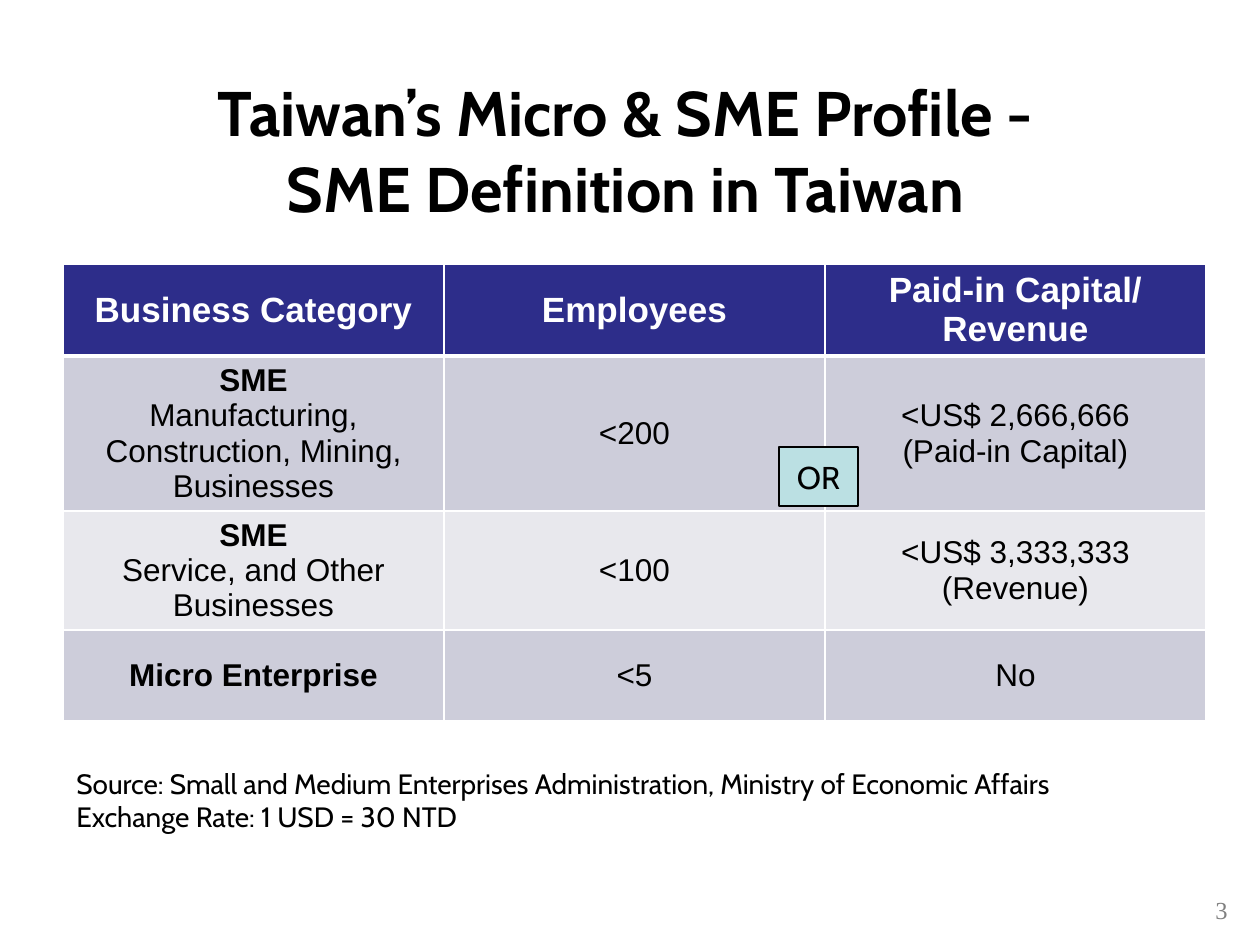
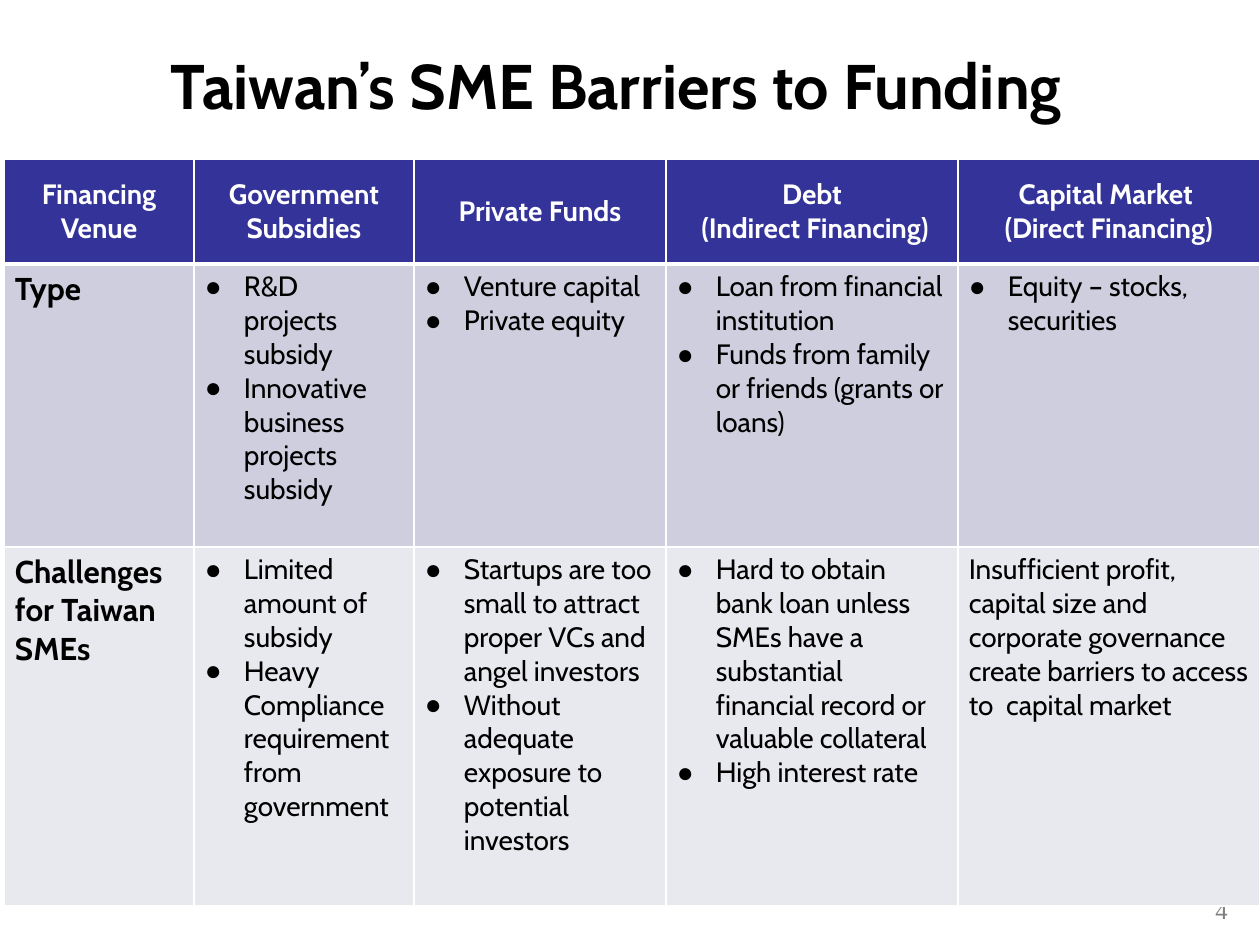
from lxml.etree import SubElement
from pptx import Presentation
from pptx.dml.color import RGBColor
from pptx.enum.shapes import MSO_SHAPE
from pptx.enum.text import MSO_ANCHOR, MSO_AUTO_SIZE, PP_ALIGN
from pptx.oxml.ns import qn
from pptx.util import Pt

PX = 914400 / 126
INK = {
    "text": "000000", "white": "FFFFFF", "page": "808080", "badge": "BBE0E3",
    "head1": "2D2D8A", "dark1": "CDCDDA", "light1": "E8E8ED",
    "head2": "333399", "dark2": "CECEDE", "light2": "E8E8EF",
}
MID, TOP = MSO_ANCHOR.MIDDLE, MSO_ANCHOR.TOP
MAIN = {"name": "Cabin", "size": 36, "bold": True, "ink": "text", "align": PP_ALIGN.CENTER}
PAGE = {"name": "Times New Roman", "size": 14, "bold": False, "ink": "page", "align": PP_ALIGN.RIGHT}
NOTE = {**PAGE, "name": "Cabin", "size": 16, "ink": "text", "align": PP_ALIGN.LEFT}
BADGE = {**NOTE, "size": 18, "align": PP_ALIGN.CENTER}
EDGES = [
    [(1263, 882), (1244, 914), (1226, 937), (1200, 945), (1263, 945)],
    [(1200, 0), (1231, 18), (1254, 37), (1263, 63), (1263, 0)],
    [(63, 945), (32, 927), (8, 908), (0, 882), (0, 945)],
]

SIZES = {
    "title": ["Taiwan’s Micro & SME Profile -", "SME Definition in Taiwan"],
    "place": (65, 74, 1121, 150),
    "page": "3",
    "at": (63, 264),
    "cols": [381, 381, 381],
    "rows": [92, 154, 119, 91],
    "fills": ["head1", "dark1", "light1", "dark1"],
    "head": {**MAIN, "name": "Arial", "size": 20, "ink": "white"},
    "body": {**BADGE, "name": "Arial"},
    "anchor": MID,
    "inset": (13, 2),
    "cells": [
        [["Business Category"], ["Employees"], ["Paid-in Capital/ Revenue"]],
        [["*SME", "Manufacturing, Construction, Mining, Businesses"], ["<200"],
         ["<US$ 2,666,666", "(Paid-in Capital)"]],
        [["*SME", "Service, and Other Businesses"], ["<100"],
         ["<US$ 3,333,333", "(Revenue)"]],
        [["*Micro Enterprise"], ["<5"], ["No"]],
    ],
}
FUNDS = {
    "title": ["Taiwan’s SME Barriers to Funding"],
    "place": (1, 17, 1230, 135),
    "page": "4",
    "at": (4, 159),
    "cols": [190, 220, 252, 292, 302],
    "rows": [105, 283, 359],
    "fills": ["head2", "dark2", "light2"],
    "head": {**MAIN, "size": 16, "ink": "white"},
    "body": NOTE,
    "anchor": TOP,
    "inset": (11, 6),
    "cells": [
        [["Financing Venue"], ["Government Subsidies"], ["Private Funds"],
         ["Debt", " (Indirect Financing)"], ["Capital Market ", "(Direct Financing)"]],
        [["*Type"],
         ["•R&D  projects subsidy", "•Innovative business projects subsidy"],
         ["•Venture capital", "•Private equity"],
         ["•Loan from financial institution",
          "•Funds from family or friends (grants or loans)"],
         ["•Equity – stocks, securities"]],
        [["*Challenges for Taiwan SMEs"],
         ["•Limited amount of subsidy",
          "•Heavy Compliance requirement from government"],
         ["•Startups are too small to attract proper VCs and angel investors",
          "•Without adequate exposure to potential investors"],
         ["•Hard to obtain bank loan unless SMEs have a substantial financial record or valuable collateral",
          "•High interest rate"],
         ["Insufficient profit, capital size and corporate governance create barriers to access to  capital market"]],
    ],
}
SOURCE = [
    "Source: Small and Medium Enterprises Administration, Ministry of Economic Affairs",
    "Exchange Rate: 1 USD = 30 NTD",
]


def px(*nums):
    return [round(num * PX) for num in nums]


def rgb(ink):
    return RGBColor.from_string(INK[ink])


def apply(item, **vals):
    for key, val in vals.items():
        setattr(item, key, val)


def paint(shape, fill, line, wide):
    shape.shadow.inherit = False
    if fill:
        shape.fill.solid()
        shape.fill.fore_color.rgb = rgb(fill)
    else:
        shape.fill.background()
    if line:
        shape.line.color.rgb = rgb(line)
        shape.line.width = Pt(wide)
    else:
        shape.line.fill.background()


def write(frame, lines, style):
    for num, line in enumerate(lines):
        para = frame.add_paragraph() if num else frame.paragraphs[0]
        para.alignment = style["align"]
        run = para.add_run()
        run.text = line.lstrip("*•")
        apply(run.font, name=style["name"], size=Pt(style["size"]), bold=style["bold"])
        run.font.color.rgb = rgb(style["ink"])
        if line[0] == "*":
            apply(run.font, size=Pt(18), bold=True)
        if line[0] == "•":
            prop = para._p.get_or_add_pPr()
            dent = px(39)[0]
            prop.set("marL", str(dent))
            prop.set("indent", str(-dent))
            SubElement(prop, qn("a:buFont"), typeface="Arial")
            SubElement(prop, qn("a:buChar"), char="●")


def label(slide, spot, lines, style):
    box = slide.shapes.add_textbox(*px(*spot))
    box.text_frame.word_wrap = True
    write(box.text_frame, lines, style)


def edge(cell, row):
    prop = cell._tc.get_or_add_tcPr()
    for side in "LRTB":
        thick = (row, side) in ((0, "B"), (1, "T"))
        line = SubElement(prop, qn("a:ln" + side), w=str(Pt(3 if thick else 1)))
        fill = SubElement(line, qn("a:solidFill"))
        SubElement(fill, qn("a:srgbClr"), val=INK["white"])


def grid(slide, data):
    cols, rows = data["cols"], data["rows"]
    spot = px(*data["at"], sum(cols), sum(rows))
    table = slide.shapes.add_table(len(rows), len(cols), *spot).table
    apply(table, first_row=False, horz_banding=False)
    for col, wide in zip(table.columns, px(*cols)):
        col.width = wide
    for row, high in zip(table.rows, px(*rows)):
        row.height = high
    side, cap = px(*data["inset"])
    for r, line in enumerate(data["cells"]):
        for c, text in enumerate(line):
            cell = table.cell(r, c)
            edge(cell, r)
            cell.fill.solid()
            cell.fill.fore_color.rgb = rgb(data["fills"][r])
            apply(cell, margin_left=side, margin_right=side, margin_top=cap,
                  margin_bottom=cap, vertical_anchor=data["anchor"] if r else MID)
            write(cell.text_frame, text, data["body" if r else "head"])


def border(slide):
    ring = slide.shapes.add_shape(MSO_SHAPE.ROUNDED_RECTANGLE, *px(5, 5, 1251, 935))
    ring.adjustments[0] = 0.06
    paint(ring, None, "white", 6)
    for start, *rest in EDGES:
        pen = slide.shapes.build_freeform(*start, scale=PX)
        pen.add_line_segments(rest)
        paint(pen.convert_to_shape(), "white", None, 0)


def build(deck, data):
    slide = deck.slides.add_slide(deck.slide_layouts[5])
    border(slide)
    title = slide.shapes.title
    apply(title, **dict(zip(("left", "top", "width", "height"), px(*data["place"]))))
    apply(title.text_frame, word_wrap=True, vertical_anchor=MID, auto_size=MSO_AUTO_SIZE.NONE)
    write(title.text_frame, data["title"], MAIN)
    label(slide, (1135, 889, 105, 55), [data["page"]], PAGE)
    grid(slide, data)
    return slide


def badge(slide):
    box = slide.shapes.add_shape(MSO_SHAPE.RECTANGLE, *px(779, 447, 79, 59))
    paint(box, "badge", "text", 1.5)
    box.text_frame.vertical_anchor = MID
    write(box.text_frame, ["OR"], BADGE)


def main():
    deck = Presentation()
    wide, high = px(1260, 945)
    apply(deck, slide_width=wide, slide_height=high)
    first = build(deck, SIZES)
    badge(first)
    label(first, (64, 760, 1142, 81), SOURCE, NOTE)
    build(deck, FUNDS)
    deck.save("out.pptx")


if __name__ == "__main__":
    main()
